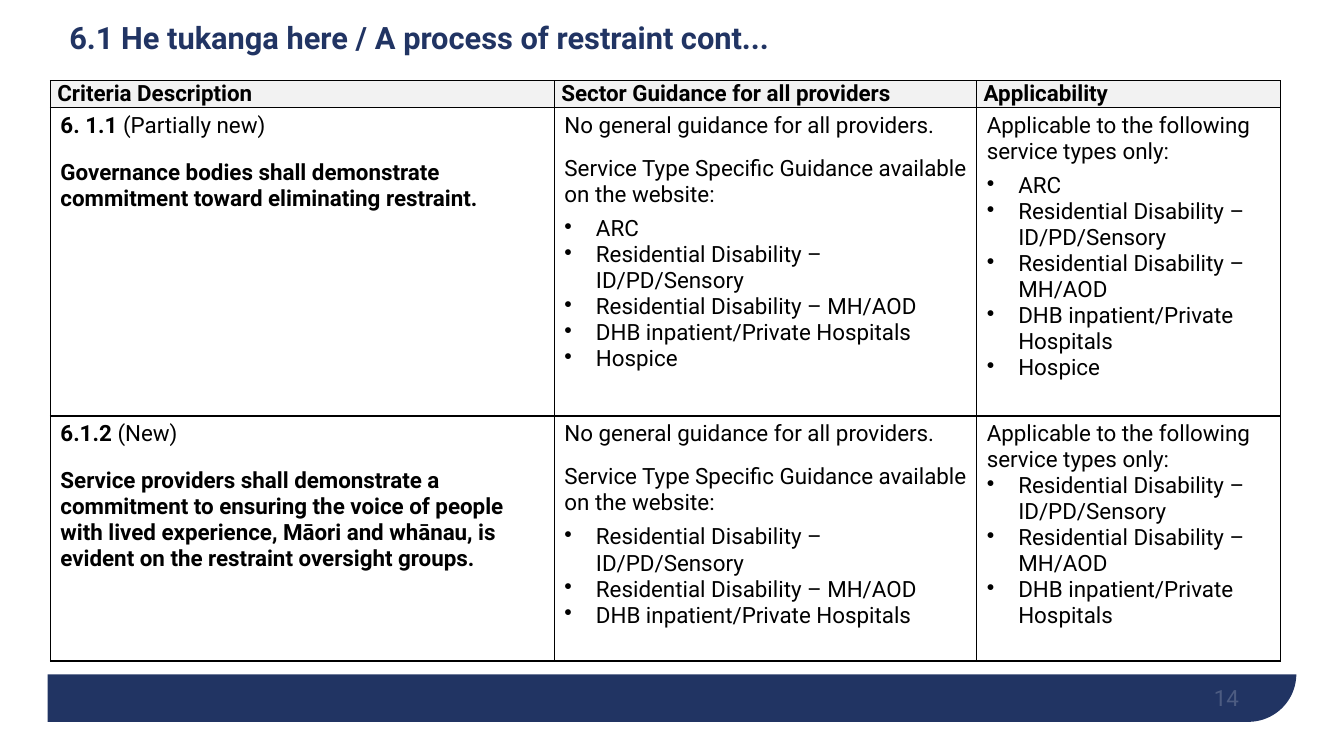
from dataclasses import dataclass
from lxml import etree
from pptx import Presentation
from pptx.dml.color import RGBColor
from pptx.enum.shapes import MSO_SHAPE
from pptx.enum.text import MSO_ANCHOR, PP_ALIGN
from pptx.oxml.ns import qn
from pptx.util import Pt

RECT, ROUND = MSO_SHAPE.RECTANGLE, MSO_SHAPE.ROUND_1_RECTANGLE
MIDDLE, BOTTOM = MSO_ANCHOR.MIDDLE, MSO_ANCHOR.BOTTOM
RIGHT = PP_ALIGN.RIGHT


@dataclass(frozen=True)
class Theme:
    face: str = "Roboto"
    navy: str = "213463"
    white: str = "FFFFFF"
    black: str = "000000"
    grey: str = "F2F2F2"
    title: int = 22
    body: int = 16


THEME = Theme()

HEADS = ["Criteria Description", "Sector Guidance for all providers", "Applicability"]
ARC, HOSPICE = "ARC", "Hospice"
IDPD = "Residential Disability – ID/PD/Sensory"
MHAOD = "Residential Disability – MH/AOD"
DHB = "DHB inpatient/Private Hospitals"
GUIDE = ["No general guidance for all providers.",
         "Service Type Specific Guidance available on the website:"]
APPLY = ["Applicable to the following service types only:"]

# Each row: number, status, criterion, guidance list, applicability list, gap before list
ROWS = [
    ("6. 1.1 ", "(Partially new)",
     "Governance bodies shall demonstrate commitment toward eliminating restraint.",
     [ARC, IDPD, MHAOD, DHB, HOSPICE], [ARC, IDPD, MHAOD, DHB, HOSPICE], 6),
    ("6.1.2 ", "(New)",
     "Service providers shall demonstrate a commitment to ensuring the voice of people "
     "with lived experience, Māori and whānau, is evident on the restraint oversight groups.",
     [IDPD, MHAOD, DHB], ["Residential Disability –ID/PD/Sensory", MHAOD, DHB], 0),
]


def style(para, size, color, bold=False):
    font = para.font
    font.name, font.size, font.bold = THEME.face, Pt(size), bold
    font.color.rgb = RGBColor.from_string(color)


def add_para(frame, text, bold=False, before=0, after=0, bullet=False):
    first = not frame.paragraphs[0].runs
    para = frame.paragraphs[0] if first else frame.add_paragraph()
    if text:
        para.add_run().text = text
    if bullet:
        props = para._p.get_or_add_pPr()
        props.set("marL", str(Pt(22.5)))
        props.set("indent", str(-Pt(22.5)))
        etree.SubElement(props, qn("a:buChar")).set("char", "•")
    para.space_before = Pt(0 if first else before)
    para.space_after = Pt(after)
    style(para, THEME.body, THEME.black, bold)
    return para


def add_box(slide, box, anchor):
    frame = slide.shapes.add_textbox(*map(Pt, box)).text_frame
    frame.word_wrap = True
    frame.vertical_anchor = anchor
    return frame


def add_block(slide, kind, box, color):
    block = slide.shapes.add_shape(kind, *map(Pt, box))
    block.shadow.inherit = False
    block.fill.solid()
    block.fill.fore_color.rgb = RGBColor.from_string(color)
    block.line.fill.background()
    return block


# Footer band: a navy panel, mostly covered by the white page
def add_band(slide, box, page):
    left, top, width, height = box
    panel = add_block(slide, ROUND, box, THEME.navy)
    panel.adjustments[0] = 0.07
    panel.rotation = 180
    panel._element.spPr.find(qn("a:xfrm")).set("flipH", "1")
    add_block(slide, RECT, (0, 0, 960, 481.7), THEME.white)

    frame = add_box(slide, (left + width - 257, top + height - 36.7, 216, 28.8), BOTTOM)
    frame.margin_left = frame.margin_right = frame.margin_top = frame.margin_bottom = 0
    para = frame.paragraphs[0]
    para.alignment = RIGHT
    run = para.add_run()
    run.text = page
    font = run.font
    font.name, font.size = THEME.face, Pt(THEME.body)
    font.color.rgb = RGBColor.from_string(THEME.white)
    tint = next(run._r.iter(qn("a:srgbClr")))
    etree.SubElement(tint, qn("a:alpha")).set("val", "20000")


def add_title(slide, box, text):
    para = add_box(slide, box, MIDDLE).paragraphs[0]
    para.add_run().text = text
    para.line_spacing = 0.9
    style(para, THEME.title, THEME.navy, True)


def add_edges(cell):
    props = cell._tc.get_or_add_tcPr()
    for spot, side in enumerate(("lnL", "lnR", "lnT", "lnB")):
        line = etree.Element(qn(f"a:{side}"), w=str(Pt(1)))
        fill = etree.SubElement(line, qn("a:solidFill"))
        etree.SubElement(fill, qn("a:srgbClr")).set("val", THEME.black)
        props.insert(spot, line)


def fill_head(cell, text):
    cell.fill.solid()
    cell.fill.fore_color.rgb = RGBColor.from_string(THEME.grey)
    cell.vertical_anchor = MIDDLE
    cell.margin_left = cell.margin_right = Pt(5)
    cell.margin_top = cell.margin_bottom = 0
    add_para(cell.text_frame, text, True, 6, 9)


def fill_rule(cell, number, status, rule):
    para = add_para(cell.text_frame, number, True, after=9)
    run = para.add_run()
    run.text = status
    run.font.bold = False
    add_para(cell.text_frame, rule, True, 6, 9)


def fill_list(cell, intro, items, gap):
    for text in intro:
        add_para(cell.text_frame, text, before=gap, after=gap)
    for text in items:
        add_para(cell.text_frame, text, bullet=True)


# Criteria table
def add_grid(slide, box, cols, rows):
    table = slide.shapes.add_table(len(rows), len(cols), *map(Pt, box)).table
    table.first_row = table.horz_banding = False
    for col, width in zip(table.columns, cols):
        col.width = Pt(width)
    for row, height in zip(table.rows, rows):
        row.height = Pt(height)
    for cell in table.iter_cells():
        cell.fill.background()
    for col, text in enumerate(HEADS):
        fill_head(table.cell(0, col), text)
    for row, (number, status, rule, guide, apply, gap) in enumerate(ROWS, 1):
        fill_rule(table.cell(row, 0), number, status, rule)
        fill_list(table.cell(row, 1), GUIDE, guide, 6)
        fill_list(table.cell(row, 2), APPLY, apply, gap)
    for cell in table.iter_cells():
        add_edges(cell)


def main():
    deck = Presentation()
    deck.slide_width, deck.slide_height = Pt(960), Pt(540)
    slide = deck.slides.add_slide(deck.slide_layouts[6])
    add_band(slide, (34, 26.6, 892, 489), "14")
    add_title(slide, (42.5, 6.5, 828, 44),
              "6.1 He tukanga here / A process of restraint cont...")
    add_grid(slide, (36, 57.6, 878.4, 414), (360, 301.7, 216.7), (18.7, 220.3, 175))
    deck.save("out.pptx")


if __name__ == "__main__":
    main()
